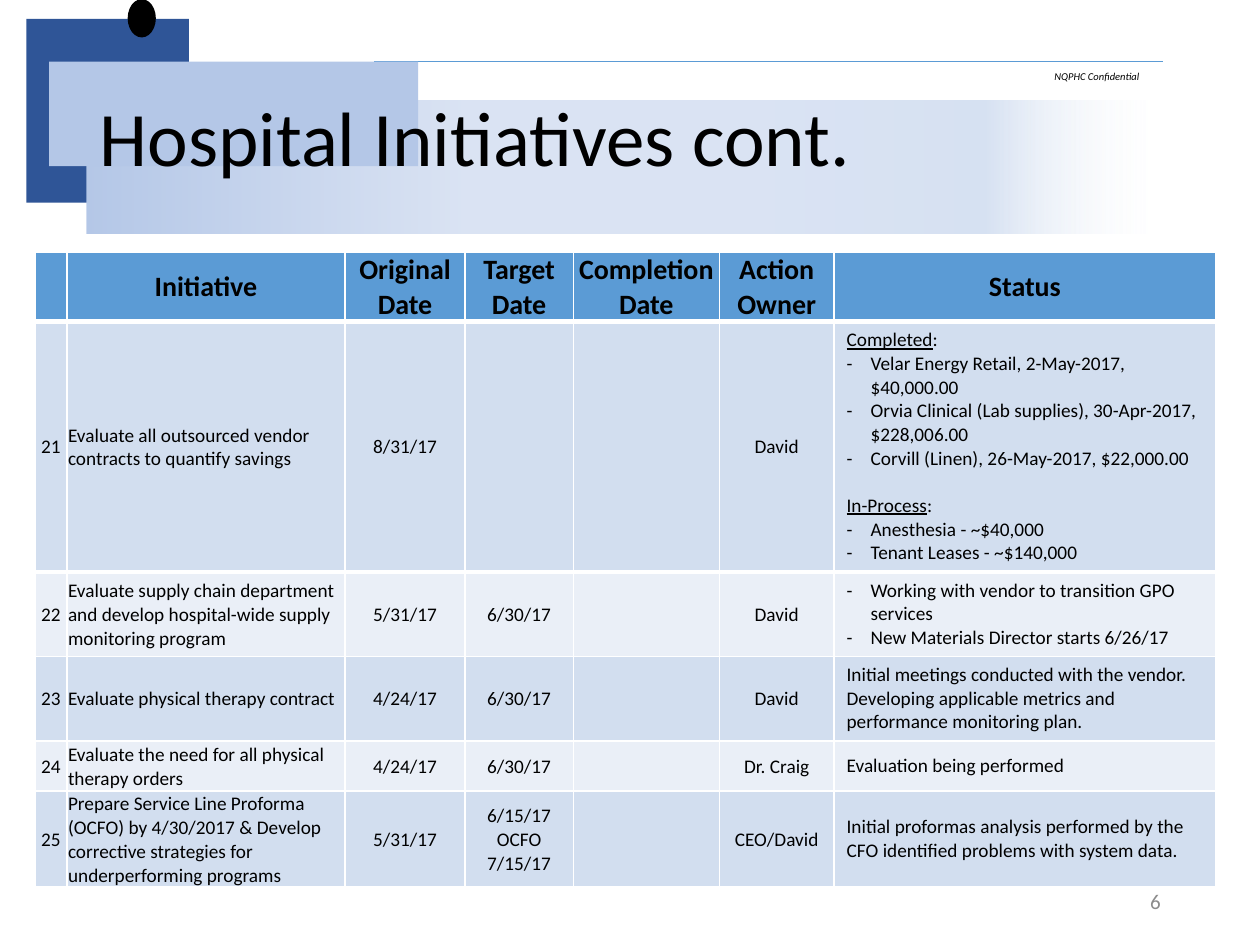
from dataclasses import dataclass

from lxml import etree
from pptx import Presentation
from pptx.dml.color import RGBColor
from pptx.enum.shapes import MSO_CONNECTOR, MSO_SHAPE
from pptx.enum.text import MSO_ANCHOR as Anchor, PP_ALIGN as Align
from pptx.oxml.ns import qn
from pptx.util import Inches, Pt


@dataclass(frozen=True)
class Theme:
    font: str = "Calibri"
    ink: str = "000000"
    grey: str = "8C8C8C"
    border: str = "FFFFFF"
    rule: str = "5B9BD5"
    navy: str = "2F5597"
    light: str = "B4C7E7"
    header: str = "5B9BD5"
    bands: tuple = ("D2DEEF", "EAEFF7")
    fade: tuple = ((0, "FFFFFF"), (17, "D6E1F2"), (39, "DAE3F3"),
                   (65, "DAE3F3"), (100, "B4C7E7"))
    title_size: int = 44
    header_size: int = 16
    body_size: int = 11
    number_size: int = 12
    note_size: int = 6


theme = Theme()


def add_span(para, text, size, color=theme.ink, bold=False, italic=False, underline=False):
    span = para.add_run()
    span.text = text
    font = span.font
    font.name, font.size = theme.font, Pt(size)
    font.bold, font.italic, font.underline = bold, italic, underline
    font.color.rgb = RGBColor.from_string(color)


def fill_cell(cell, lines, size, align, bold=False):
    """Write one paragraph per line: "- " starts a bullet, a final ":" marks a heading."""
    cell.vertical_anchor = Anchor.MIDDLE
    for index, line in enumerate(lines):
        frame = cell.text_frame
        para = frame.add_paragraph() if index else frame.paragraphs[0]
        para.alignment = align
        if line.startswith("- "):
            props = para._p.get_or_add_pPr()
            props.set("marL", str(Inches(0.19)))
            props.set("indent", str(-Inches(0.19)))
            etree.SubElement(props, qn("a:buFont"), typeface=theme.font)
            etree.SubElement(props, qn("a:buChar"), char="-")
            add_span(para, line[2:], size)
        elif line.endswith(":"):
            if index:
                para.space_before = Pt(size * 1.2)
            add_span(para, line[:-1], size, underline=True)
            add_span(para, ":", size)
        else:
            add_span(para, line, size, bold=bold)


deck = Presentation()
deck.slide_width, deck.slide_height = Inches(10), Inches(7.5)
page = deck.slides.add_slide(deck.slide_layouts[5])

# Header decoration
rule = page.shapes.add_connector(
    MSO_CONNECTOR.STRAIGHT, Inches(2.97), Inches(0.49), Inches(9.23), Inches(0.49))
rule.line.color.rgb = RGBColor.from_string(theme.rule)
rule.line.width = Pt(0.5)
etree.SubElement(rule._element.spPr, qn("a:effectLst"))

decoration = [
    (MSO_SHAPE.RECTANGLE, (0.21, 0.15, 1.29, 1.46), theme.navy),
    (MSO_SHAPE.OVAL, (1.02, 0, 0.21, 0.29), theme.ink),
    (MSO_SHAPE.RECTANGLE, (0.69, 0.8, 8.57, 1.05), None),
    (MSO_SHAPE.RECTANGLE, (0.39, 0.49, 2.93, 0.83), theme.light),
]
for kind, place, color in decoration:
    shape = page.shapes.add_shape(kind, *map(Inches, place))
    shape.shadow.inherit = False
    if kind == MSO_SHAPE.OVAL:
        shape.line.color.rgb = RGBColor.from_string(color)
        shape.line.width = Pt(1)
    else:
        shape.line.fill.background()
    if color:
        shape.fill.solid()
        shape.fill.fore_color.rgb = RGBColor.from_string(color)
        continue
    shape.fill.gradient()
    shape.fill.gradient_angle = 180
    stops = shape._element.spPr.find(qn("a:gradFill")).find(qn("a:gsLst"))
    for stop in list(stops):
        stops.remove(stop)
    for position, stop_color in theme.fade:
        stop = etree.SubElement(stops, qn("a:gs"), pos=str(position * 1000))
        tint = etree.SubElement(stop, qn("a:srgbClr"), val=stop_color)
        if position == 0:
            etree.SubElement(tint, qn("a:alpha"), val="0")

# Title, in front of the decoration
title = page.shapes.title
page.shapes.element.append(title.element)
title.left, title.top, title.width, title.height = map(Inches, (0.69, 0.4, 8.62, 1.45))
title.text_frame.vertical_anchor = Anchor.MIDDLE
para = title.text_frame.paragraphs[0]
para.alignment, para.line_spacing = Align.LEFT, 0.9
add_span(para, "Hospital Initiatives cont.", theme.title_size)

# Confidentiality note
note = page.shapes.add_textbox(*map(Inches, (8.27, 0.5, 1.05, 0.33)))
note.text_frame.word_wrap = True
para = note.text_frame.paragraphs[0]
para.line_spacing, para.space_after = 1.07, Pt(6)
add_span(para, "NQPHC Confidential", theme.note_size, italic=True)

# Initiatives table; the default table style draws the thin white cell borders
headings = ["", "Initiative", "Original Date", "Target Date", "Completion Date",
            "Action Owner", "Status"]
initiatives = [
    ["21", "Evaluate all outsourced vendor contracts to quantify savings",
     "8/31/17", "", "", "David",
     ["Completed:",
      "- Velar Energy Retail, 2-May-2017, $40,000.00",
      "- Orvia Clinical (Lab supplies), 30-Apr-2017, $228,006.00",
      "- Corvill (Linen), 26-May-2017, $22,000.00",
      "In-Process:",
      "- Anesthesia - ~$40,000",
      "- Tenant Leases - ~$140,000"]],
    ["22", "Evaluate supply chain department and develop hospital-wide supply "
     "monitoring program", "5/31/17", "6/30/17", "", "David",
     ["- Working with vendor to transition GPO services",
      "- New Materials Director starts 6/26/17"]],
    ["23", "Evaluate physical therapy contract", "4/24/17", "6/30/17", "", "David",
     "Initial meetings conducted with the vendor. Developing applicable metrics "
     "and performance monitoring plan."],
    ["24", "Evaluate the need for all physical therapy orders",
     "4/24/17", "6/30/17", "", "Dr. Craig", "Evaluation being performed"],
    ["25", "Prepare Service Line Proforma (OCFO) by 4/30/2017 & Develop corrective "
     "strategies for underperforming programs",
     "5/31/17", ["6/15/17 OCFO", "7/15/17"], "", "CEO/David",
     "Initial proformas analysis performed by the CFO identified problems with "
     "system data."],
]
column_widths = [0.25, 2.21, 0.95, 0.86, 1.16, 0.91, 3.03]
row_heights = [0.55, 1.99, 0.67, 0.67, 0.4, 0.76]
initiative_column, status_column = 1, 6

table = page.shapes.add_table(
    len(row_heights), len(column_widths), Inches(0.28), Inches(2),
    Inches(sum(column_widths)), Inches(sum(row_heights))).table
for column, width in zip(table.columns, column_widths):
    column.width = Inches(width)
for row, height in zip(table.rows, row_heights):
    row.height = Inches(height)

for row_index, values in enumerate([headings] + initiatives):
    is_header = row_index == 0
    band = theme.header if is_header else theme.bands[(row_index - 1) % 2]
    for column_index, value in enumerate(values):
        cell = table.cell(row_index, column_index)
        cell.fill.solid()
        cell.fill.fore_color.rgb = RGBColor.from_string(band)
        if row_index < 2:
            edge = etree.Element(qn("a:lnB" if is_header else "a:lnT"), w=str(Pt(3)))
            paint = etree.SubElement(edge, qn("a:solidFill"))
            etree.SubElement(paint, qn("a:srgbClr"), val=theme.border)
            cell._tc.get_or_add_tcPr().insert(0, edge)
        if not value:
            continue
        if is_header or column_index != status_column:
            cell.margin_left = cell.margin_right = cell.margin_top = Inches(0.01)
            cell.margin_bottom = 0
        is_prose = not is_header and column_index in (initiative_column, status_column)
        fill_cell(cell, [value] if isinstance(value, str) else value,
                  theme.header_size if is_header else theme.body_size,
                  Align.LEFT if is_prose else Align.CENTER, bold=is_header)

# Page number
number = page.shapes.add_textbox(*map(Inches, (7.06, 6.95, 2.25, 0.4)))
number.text_frame.word_wrap = True
number.text_frame.vertical_anchor = Anchor.MIDDLE
para = number.text_frame.paragraphs[0]
para.alignment = Align.RIGHT
add_span(para, "6", theme.number_size, theme.grey)

deck.save("out.pptx")
